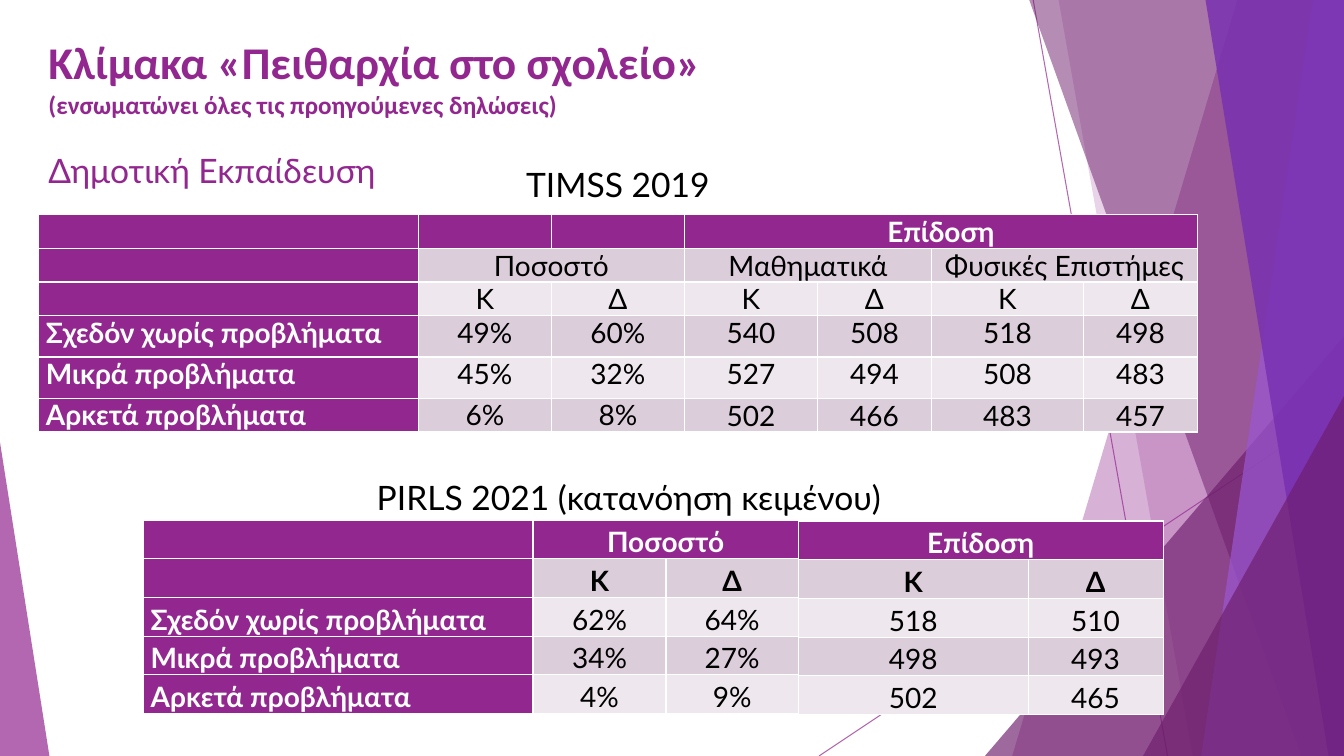
from dataclasses import dataclass

from lxml.etree import SubElement
from pptx import Presentation
from pptx.dml.color import RGBColor
from pptx.enum.shapes import MSO_CONNECTOR, MSO_SHAPE
from pptx.enum.text import MSO_ANCHOR, PP_ALIGN
from pptx.oxml.ns import qn
from pptx.util import Pt


@dataclass(frozen=True)
class Theme:
    purple: str = "92278F"
    plum: str = "6D1D6B"
    lilac: str = "9B57D3"
    violet: str = "762EB1"
    white: str = "FFFFFF"
    black: str = "000000"
    dark_band: str = "DCCDDB"
    light_band: str = "EEE8EE"
    title_font: str = "Calibri"
    body_font: str = "Lato"
    title_size: float = 32.4
    subtitle_size: float = 18
    heading_size: float = 24
    table_size: float = 20


THEME = Theme()
PAGE_WIDTH, PAGE_HEIGHT = 960, 540
PANEL_TOP = -0.6

LABELS = ["Σχεδόν χωρίς προβλήματα", "Μικρά προβλήματα", "Αρκετά προβλήματα"]
TIMSS_ROWS = [24, 24, 24, 29.5, 29.5, 24]
PIRLS_ROWS = [27.6] * 5

# None marks a cell that is merged into the one on its left.
TIMSS_SHARES = [
    ["", "", ""],
    ["", "Ποσοστό", None],
    ["", "Κ", "Δ"],
    [LABELS[0], "49%", "60%"],
    [LABELS[1], "45%", "32%"],
    [LABELS[2], "6%", "8%"],
]
TIMSS_SCORES = [
    ["Επίδοση", None, None, None],
    ["Μαθηματικά", None, "Φυσικές Επιστήμες", None],
    ["Κ", "Δ", "Κ", "Δ"],
    ["540", "508", "518", "498"],
    ["527", "494", "508", "483"],
    ["502", "466", "483", "457"],
]
PIRLS_SHARES = [
    ["", "Ποσοστό", None],
    ["", "Κ", "Δ"],
    [LABELS[0], "62%", "64%"],
    [LABELS[1], "34%", "27%"],
    [LABELS[2], "4%", "9%"],
]
PIRLS_SCORES = [
    ["Επίδοση", None],
    ["Κ", "Δ"],
    ["518", "510"],
    ["498", "493"],
    ["502", "465"],
]


def rgb(color):
    return RGBColor.from_string(color)


def set_opacity(properties, percent):
    color = next(properties.iter(qn("a:srgbClr")))
    SubElement(color, qn("a:alpha")).set("val", str(percent * 1000))


def style_span(span, size, color, bold=False, font=THEME.body_font):
    span.font.name = font
    span.font.size = Pt(size)
    span.font.bold = bold
    span.font.color.rgb = rgb(color)


def paint(shape, color, opacity):
    shape.shadow.inherit = False
    shape.line.fill.background()
    shape.fill.solid()
    shape.fill.fore_color.rgb = rgb(color)
    set_opacity(shape.fill._xPr, opacity)


def add_panel(page, top_x, bottom_x, color, opacity):
    """Fill the area from a slanted left edge to the right side of the page."""
    builder = page.shapes.build_freeform(Pt(top_x), Pt(PANEL_TOP), scale=1.0)
    corners = [(PAGE_WIDTH, PANEL_TOP), (PAGE_WIDTH, PAGE_HEIGHT), (bottom_x, PAGE_HEIGHT)]
    builder.add_line_segments([(Pt(x), Pt(y)) for x, y in corners], close=True)
    paint(builder.convert_to_shape(), color, opacity)


def add_corner_triangle(page, left, top, width, apex, color, opacity):
    """Stand a triangle on the bottom of the page; apex is 0 (left) to 1 (right)."""
    triangle = page.shapes.add_shape(
        MSO_SHAPE.ISOSCELES_TRIANGLE, Pt(left), Pt(top), Pt(width), Pt(PAGE_HEIGHT - top))
    triangle.adjustments[0] = apex
    paint(triangle, color, opacity)


def add_thin_line(page, *ends):
    line = page.shapes.add_connector(MSO_CONNECTOR.STRAIGHT, *map(Pt, ends))
    line.line.width = Pt(0.75)
    line.line.color.rgb = rgb(THEME.purple)
    properties = line._element.spPr
    set_opacity(properties, 70)
    SubElement(properties, qn("a:effectLst"))


def add_decoration(page):
    add_thin_line(page, 738, 0, 834, PAGE_HEIGHT)
    add_thin_line(page, PAGE_WIDTH, 290, 585, PAGE_HEIGHT)
    add_panel(page, 884, 723, THEME.purple, 36)
    add_panel(page, 756, 852, THEME.purple, 20)
    add_corner_triangle(page, 703.5, 240, 256.5, 1, THEME.plum, 66)
    add_panel(page, 735, 929.5, THEME.plum, 50)
    add_panel(page, 938, 858, THEME.lilac, 70)
    add_panel(page, 861, 949, THEME.violet, 80)
    add_corner_triangle(page, 816.5, 283, 143.5, 1, THEME.plum, 66)
    add_corner_triangle(page, 0, 316, 35.3, 0, THEME.purple, 70)


def set_title(page):
    title = page.shapes.title
    title.left, title.top, title.width, title.height = Pt(27.4), Pt(21), Pt(800.6), Pt(67)
    frame = title.text_frame
    frame.text = "Κλίμακα «Πειθαρχία στο σχολείο»\v(ενσωματώνει όλες τις προηγούμενες δηλώσεις)"
    frame.vertical_anchor = MSO_ANCHOR.TOP
    para = frame.paragraphs[0]
    para.alignment = PP_ALIGN.LEFT
    for span, size in zip(para.runs, (THEME.title_size, THEME.subtitle_size)):
        style_span(span, size, THEME.purple, True, THEME.title_font)


def add_heading(page, text, left, top, width, color=THEME.black, alignment=PP_ALIGN.CENTER):
    box = page.shapes.add_textbox(Pt(left), Pt(top), Pt(width), Pt(36))
    box.text_frame.word_wrap = True
    para = box.text_frame.paragraphs[0]
    para.text = text
    para.alignment = alignment
    style_span(para.runs[0], THEME.heading_size, color)


def fill_cell(cell, text, background, color, bold, alignment, spacing):
    cell.margin_left = cell.margin_right = Pt(5.4)
    cell.margin_top = cell.margin_bottom = 0
    cell.fill.solid()
    cell.fill.fore_color.rgb = rgb(background)
    para = cell.text_frame.paragraphs[0]
    para.alignment = alignment
    para.line_spacing = spacing
    if text:
        para.text = text
        style_span(para.runs[0], THEME.table_size, color, bold)


def add_results_table(page, content, left, top, widths, heights, labelled=False,
                      label_alignment=PP_ALIGN.LEFT, bold_rows=1, spacing=None):
    """Add a table with a purple header row and, if labelled, a purple first column."""
    table = page.shapes.add_table(
        len(heights), len(widths), Pt(left), Pt(top), Pt(sum(widths)), Pt(sum(heights))).table
    for column, width in zip(table.columns, widths):
        column.width = Pt(width)
    for row, height in zip(table.rows, heights):
        row.height = Pt(height)
    for r, texts in enumerate(content):
        band = THEME.dark_band if r % 2 else THEME.light_band
        for c, text in enumerate(texts):
            is_label = labelled and c == 0
            strong = r == 0 or is_label
            fill_cell(table.cell(r, c), text,
                      THEME.purple if strong else band,
                      THEME.white if strong else THEME.black,
                      strong or r < bold_rows,
                      label_alignment if is_label else PP_ALIGN.CENTER, spacing)
        starts = [c for c, text in enumerate(texts) if text is not None]
        for start, end in zip(starts, starts[1:] + [len(texts)]):
            if end - start > 1:
                table.cell(r, start).merge(table.cell(r, end - 1))


def main():
    deck = Presentation()
    deck.slide_width, deck.slide_height = Pt(PAGE_WIDTH), Pt(PAGE_HEIGHT)
    page = deck.slides.add_slide(deck.slide_layouts[5])
    add_decoration(page)
    set_title(page)
    add_heading(page, "Δημοτική Εκπαίδευση", 27.4, 103.7, 495.4, THEME.purple, PP_ALIGN.LEFT)
    add_heading(page, "TIMSS 2019", 91.4, 113.8, 700)
    add_results_table(page, TIMSS_SHARES, 27.4, 153.4, [271.5, 95, 95], TIMSS_ROWS, labelled=True)
    add_results_table(page, TIMSS_SCORES, 488.9, 153.4, [95, 81.4, 108.7, 81.4], TIMSS_ROWS)
    add_heading(page, "PIRLS 2021 (κατανόηση κειμένου)", 226, 337, 446.4)
    add_results_table(page, PIRLS_SHARES, 102.2, 371.5, [278.6, 95, 94.4], PIRLS_ROWS,
                      labelled=True, label_alignment=PP_ALIGN.JUSTIFY, bold_rows=2, spacing=1.15)
    add_results_table(page, PIRLS_SCORES, 570.2, 372.2, [164.2, 96.5], PIRLS_ROWS,
                      bold_rows=2, spacing=1.15)
    deck.save("out.pptx")


if __name__ == "__main__":
    main()
